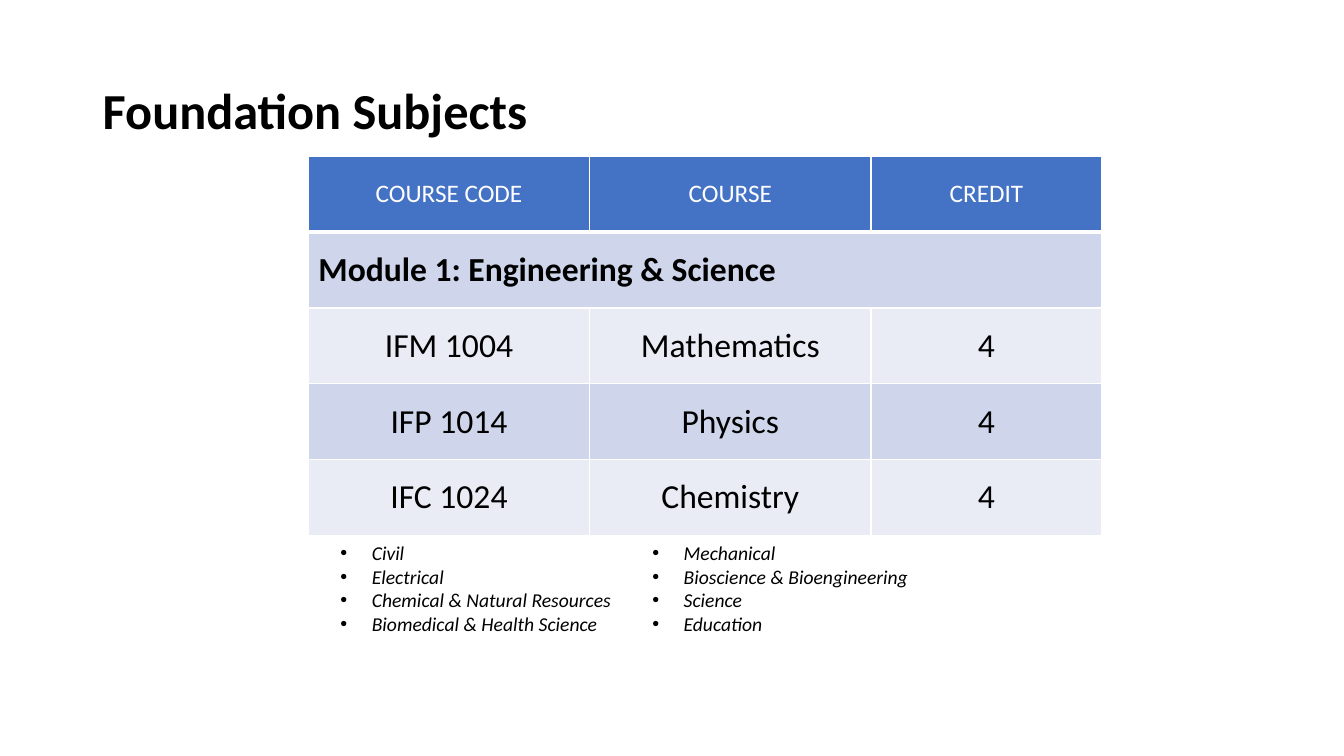
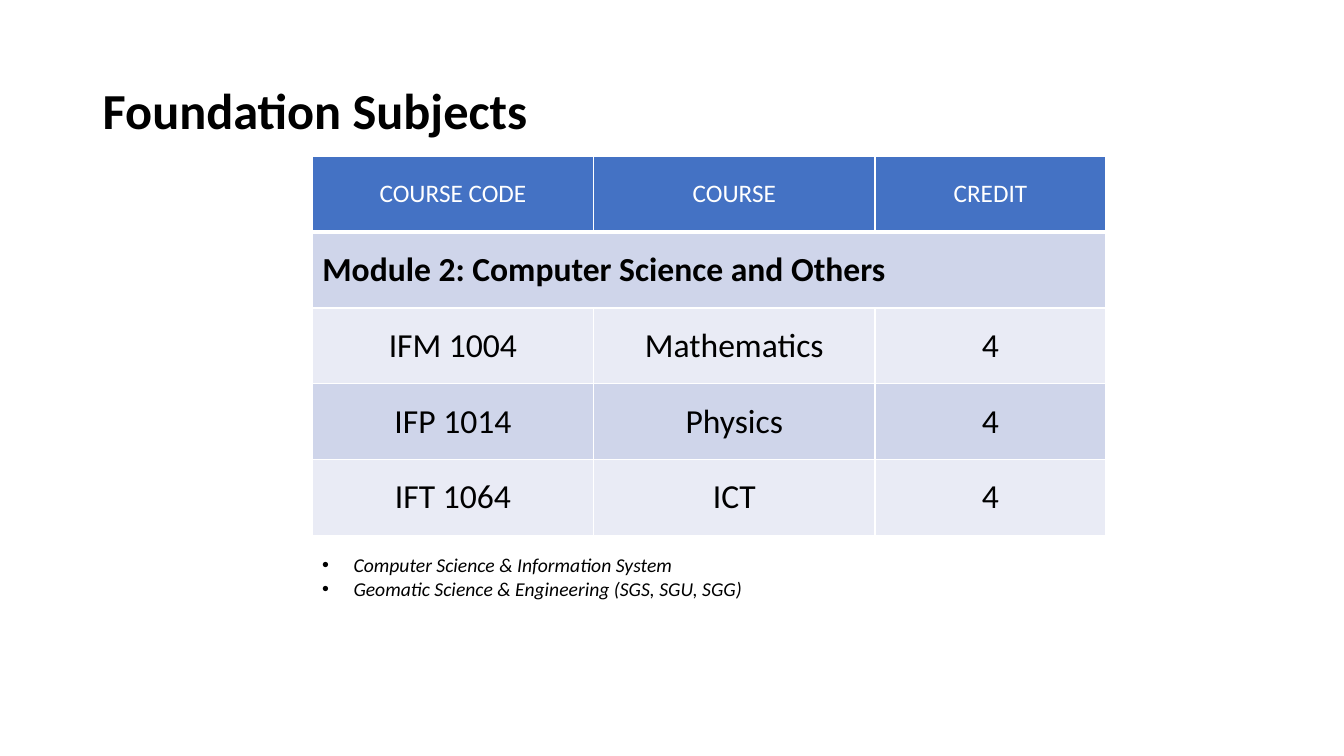
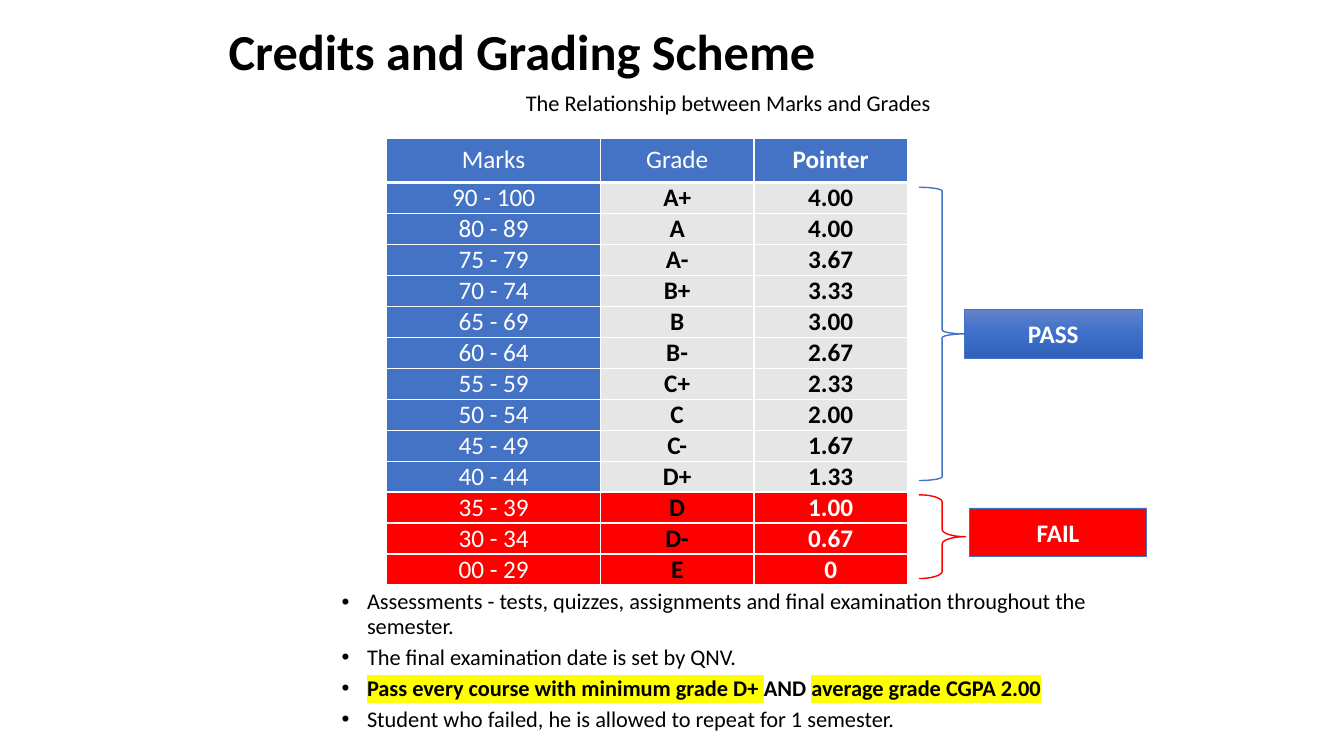
from copy import deepcopy

from lxml.etree import SubElement
from pptx import Presentation
from pptx.dml.color import RGBColor
from pptx.enum.shapes import MSO_SHAPE as Shape
from pptx.enum.text import MSO_ANCHOR as Anchor, PP_ALIGN as Align
from pptx.oxml.ns import qn
from pptx.util import Cm, Pt

FONT = "Calibri"
BLACK, WHITE, BLUE, RED = "000000", "FFFFFF", "4472C4", "FF0000"
BAND, PALE, GREY, YELLOW = "CFD5EA", "E9EBF5", "E7E6E6", "FFFF00"
SHEEN = ("6183CB", "3E70CA", "3062BB")


def rgb(code):
    return RGBColor.from_string(code)


def add_bullet(para, indent):
    """Give the paragraph a hanging bullet; indent is in cm."""
    props = para._p.get_or_add_pPr()
    props.set("marL", str(Cm(indent)))
    props.set("indent", str(-Cm(indent)))
    SubElement(props, qn("a:buFont"), typeface="Arial")
    SubElement(props, qn("a:buChar"), char="•")


def add_run(para, text, size, color=BLACK, bold=False, italic=False, mark=None):
    run = para.add_run()
    run.text = text
    font = run.font
    font.name, font.size, font.bold, font.italic = FONT, Pt(size), bold, italic
    font.color.rgb = rgb(color)
    if mark:
        props = run._r.rPr
        light = SubElement(props, qn("a:highlight"))
        SubElement(light, qn("a:srgbClr"), val=mark)
        props.find(qn("a:solidFill")).addnext(light)


def write(frame, paras, align=Align.LEFT, spacing=None, before=0, indent=None, **style):
    """Fill a frame; a paragraph is a string or a list of (text, style) runs."""
    frame.word_wrap = True
    for i, item in enumerate(paras):
        para = frame.add_paragraph() if i else frame.paragraphs[0]
        para.alignment = align
        para.space_before = Pt(before)
        if spacing:
            para.line_spacing = spacing
        if indent:
            add_bullet(para, indent)
        for text, extra in [(item, {})] if isinstance(item, str) else item:
            add_run(para, text, **{**style, **extra})


def add_text(slide, box, paras, anchor=Anchor.TOP, **style):
    frame = slide.shapes.add_textbox(*map(Cm, box)).text_frame
    frame.vertical_anchor = anchor
    write(frame, paras, **style)


def add_title(slide, box, text):
    add_text(slide, box, [text], Anchor.MIDDLE, size=36, bold=True, spacing=0.9)


def add_notes(slide, box, items):
    """Small italic bullet list under a table."""
    add_text(slide, box, items, size=14, italic=True, indent=0.79)


def add_grid(slide, left, top, cols, rows):
    """Add an empty table from column widths and row heights in cm."""
    table = slide.shapes.add_table(
        len(rows), len(cols), Cm(left), Cm(top), Cm(sum(cols)), Cm(sum(rows))).table
    for col, width in zip(table.columns, cols):
        col.width = Cm(width)
    for row, height in zip(table.rows, rows):
        row.height = Cm(height)
    return table


def set_cell(cell, text, fill, head=False, pad=None, align=Align.CENTER, **style):
    """Style a cell; pad is the side margin in cm, with none above or below."""
    cell.vertical_anchor = Anchor.MIDDLE
    if pad is not None:
        cell.margin_left = cell.margin_right = Cm(pad)
        cell.margin_top = cell.margin_bottom = 0
    props = cell._tc.get_or_add_tcPr()
    for side in "LRTB":
        width = Pt(3 if head and side == "B" else 1)
        line = SubElement(props, qn(f"a:ln{side}"), w=str(width))
        SubElement(SubElement(line, qn("a:solidFill")), qn("a:srgbClr"), val=WHITE)
    cell.fill.solid()
    cell.fill.fore_color.rgb = rgb(fill)
    if text:
        write(cell.text_frame, [text], align=align, **style)


def add_courses(slide, left, top, module, courses):
    table = add_grid(slide, left, top, [7.09, 7.09, 5.82], [1.91] * 5)
    for c, text in enumerate(["COURSE CODE", "COURSE", "CREDIT"]):
        set_cell(table.cell(0, c), text, BLUE, head=True, size=18, color=WHITE)
    table.cell(1, 0).merge(table.cell(1, 2))
    for c, text in enumerate([module, "", ""]):
        set_cell(table.cell(1, c), text, BAND, align=Align.LEFT, size=24, bold=True)
    for r, course in enumerate(courses, 2):
        for c, text in enumerate([*course, "4"]):
            set_cell(table.cell(r, c), text, BAND if r % 2 else PALE, size=24)


def add_grades(slide, left, top, grades, passes):
    """Table of marks; rows after the first `passes` grades are red."""
    table = add_grid(slide, left, top, [5.38, 3.87, 3.87], [1.12] + [0.78] * len(grades))
    for c, text in enumerate(["Marks", "Grade", "Pointer"]):
        set_cell(table.cell(0, c), text, BLUE, head=True, pad=0.18,
                 size=18, color=WHITE, bold=c == 2)
    for r, row in enumerate(grades, 1):
        passed = r <= passes
        fills = [BLUE, GREY, GREY] if passed else [RED] * 3
        inks = [WHITE, BLACK, BLACK if passed else WHITE]
        for c, (text, fill, ink) in enumerate(zip(row, fills, inks)):
            set_cell(table.cell(r, c), text, fill, pad=0.18,
                     size=18, color=ink, bold=c > 0)


def add_shape(slide, kind, box, line, width):
    shape = slide.shapes.add_shape(kind, *map(Cm, box))
    shape.shadow.inherit = False
    shape.line.color.rgb = rgb(line)
    shape.line.width = Pt(width)
    return shape


def fill_sheen(shape, colors):
    """Vertical gradient through evenly spaced colours."""
    shape.fill.gradient()
    shape.fill.gradient_angle = 270
    stops = shape._element.spPr.find(".//" + qn("a:gsLst"))
    stops.insert(1, deepcopy(stops[0]))
    for i, (stop, code) in enumerate(zip(shape.fill.gradient_stops, colors)):
        stop.color.rgb = rgb(code)
        stop.position = i / (len(colors) - 1)


def add_result(slide, box, color, label, tag, curl=0.083, sheen=None):
    """Brace in the box, and a label at offset `tag` from its corner."""
    left, top = box[:2]
    brace = add_shape(slide, Shape.RIGHT_BRACE, box, color, 1)
    brace.fill.background()
    brace.adjustments[0] = curl
    plate = add_shape(slide, Shape.RECTANGLE,
                      (left + tag[0], top + tag[1], 4.47, 1.22), BLUE, 0.5)
    if sheen:
        fill_sheen(plate, sheen)
    else:
        plate.fill.solid()
        plate.fill.fore_color.rgb = rgb(color)
    plate.text_frame.vertical_anchor = Anchor.MIDDLE
    write(plate.text_frame, [label], align=Align.CENTER, size=18, color=WHITE, bold=True)


def build_subjects(slide, left, module, last, notes):
    """Course slide; notes is a list of (box, items)."""
    add_title(slide, (2.34, 1.02, 29.21, 3.68), "Foundation Subjects")
    add_courses(slide, left, 3.94, module,
                [("IFM 1004", "Mathematics"), ("IFP 1014", "Physics"), last])
    for box, items in notes:
        add_notes(slide, box, items)


def build_grading(slide):
    grades = [
        ("90 - 100", "A+", "4.00"), ("80 - 89", "A", "4.00"),
        ("75 - 79", "A-", "3.67"), ("70 - 74", "B+", "3.33"),
        ("65 - 69", "B", "3.00"), ("60 - 64", "B-", "2.67"),
        ("55 - 59", "C+", "2.33"), ("50 - 54", "C", "2.00"),
        ("45 - 49", "C-", "1.67"), ("40 - 44", "D+", "1.33"),
        ("35 - 39", "D", "1.00"), ("30 - 34", "D-", "0.67"),
        ("00 - 29", "E", "0"),
    ]
    strong = {"bold": True}
    marked = {"bold": True, "mark": YELLOW}
    rules = [
        "Assessments - tests, quizzes, assignments and final examination "
        "throughout the semester.",
        "The final examination date is set by QNV.",
        [("Pass every course with minimum grade D+ ", marked), ("AND ", strong),
         ("average grade CGPA 2.00", marked)],
        "Student who failed, he is allowed to repeat for 1 semester.",
    ]
    add_title(slide, (5.51, 0.51, 26.19, 1.7), "Credits and Grading Scheme")
    add_text(slide, (7.09, 2.21, 22.53, 1), ["The Relationship between Marks and Grades"],
             align=Align.CENTER, size=16, spacing=0.9)
    add_text(slide, (8.36, 14.76, 21.26, 3.9), rules,
             size=16, spacing=0.9, before=5, indent=0.64)
    add_grades(slide, 9.75, 3.48, grades, passes=10)
    add_result(slide, (23.16, 4.72, 1.17, 7.39), BLUE, "PASS", (1.15, 3.08), sheen=SHEEN)
    add_result(slide, (23.16, 12.47, 1.17, 2.11), RED, "FAIL", (1.27, 0.33), curl=0.154)


def main():
    deck = Presentation()
    deck.slide_width, deck.slide_height = Cm(33.87), Cm(19.05)
    first, second, third = [deck.slides.add_slide(deck.slide_layouts[6]) for _ in range(3)]
    build_subjects(
        first, 7.77, "Module 1: Engineering & Science", ("IFC 1024", "Chemistry"),
        [((8.33, 13.51, 7.86, 2.65),
          ["Civil", "Electrical", "Chemical & Natural Resources",
           "Biomedical & Health Science"]),
         ((16.19, 13.51, 7.86, 2.65),
          ["Mechanical", "Bioscience & Bioengineering", "Science", "Education"])])
    build_subjects(
        second, 7.87, "Module 2: Computer Science and Others", ("IFT 1064", "ICT"),
        [((7.87, 13.82, 12.7, 1.45),
          ["Computer Science & Information System",
           "Geomatic Science & Engineering (SGS, SGU, SGG)"])])
    build_grading(third)
    deck.save("out.pptx")


if __name__ == "__main__":
    main()
